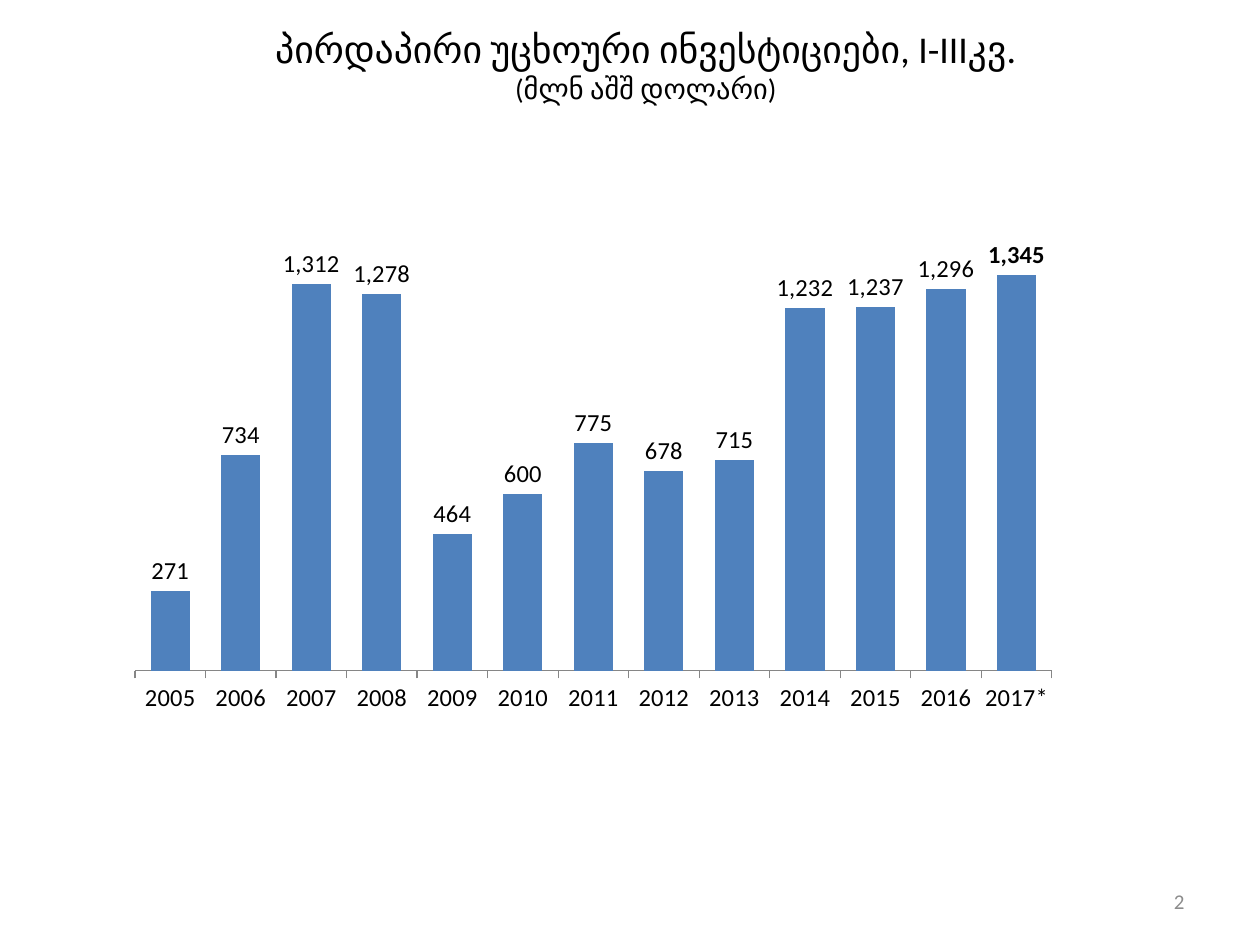
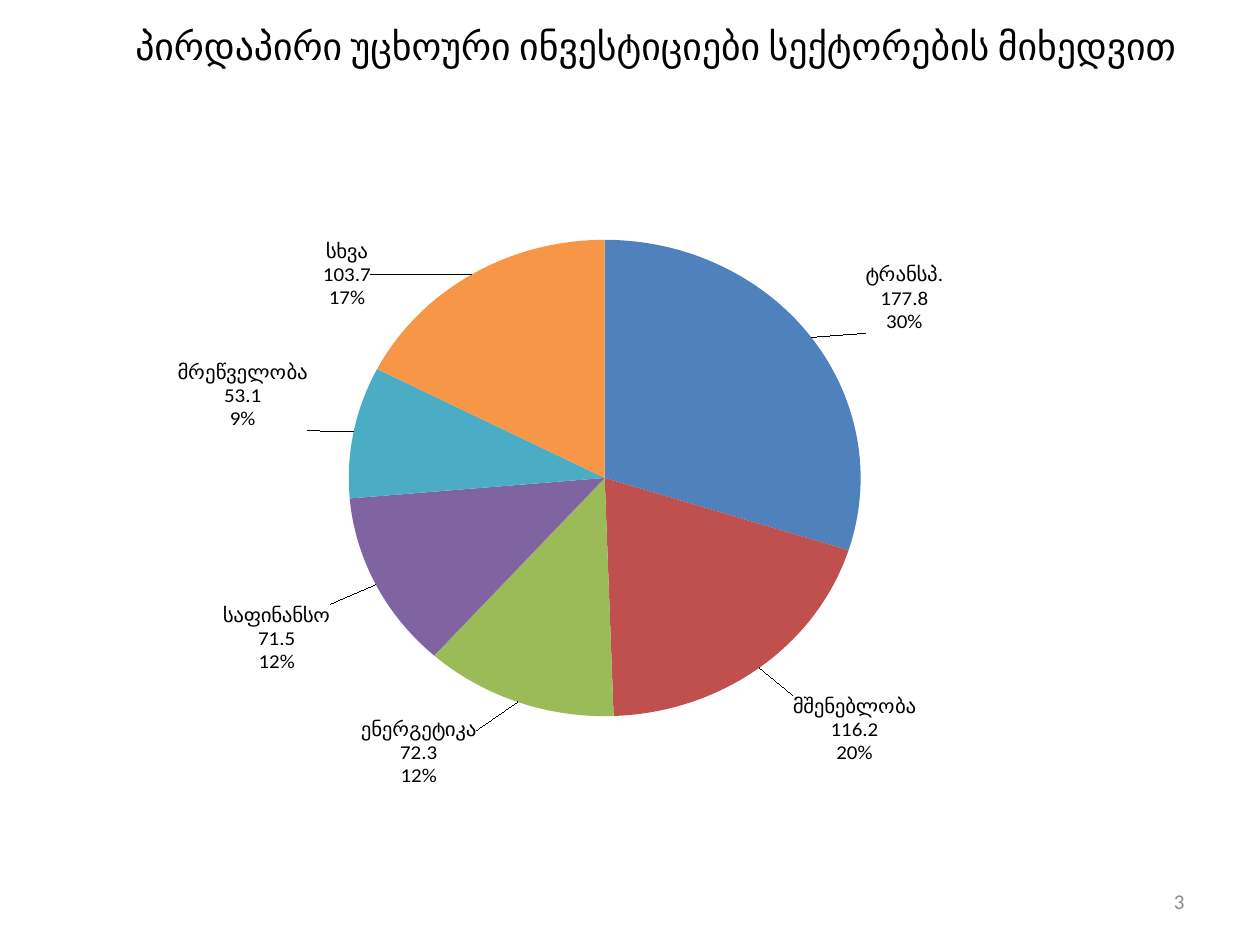
from dataclasses import dataclass

from pptx import Presentation
from pptx.chart.chart import Chart
from pptx.chart.data import CategoryChartData
from pptx.dml.color import RGBColor
from pptx.enum.chart import XL_CHART_TYPE, XL_LABEL_POSITION, XL_TICK_MARK
from pptx.enum.text import MSO_ANCHOR, PP_ALIGN
from pptx.oxml import parse_xml
from pptx.oxml.ns import nsdecls
from pptx.slide import Slide
from pptx.util import Inches, Pt

FONT = "Calibri"
BLACK = RGBColor(0x00, 0x00, 0x00)
GRAY = RGBColor(0x8C, 0x8C, 0x8C)
AXIS_GRAY = RGBColor(0x86, 0x86, 0x86)
BLUE = RGBColor(0x4F, 0x81, 0xBD)
RED = RGBColor(0xC0, 0x50, 0x4D)
GREEN = RGBColor(0x9B, 0xBB, 0x59)
PURPLE = RGBColor(0x80, 0x64, 0xA2)
TEAL = RGBColor(0x4B, 0xAC, 0xC6)
ORANGE = RGBColor(0xF7, 0x96, 0x46)

TITLE_SIZE = 21.6
SUBTITLE_SIZE = 16.2
COLUMN_FONT_SIZE = 14
PIE_FONT_SIZE = 12
THOUSANDS = "#,##0"


@dataclass(frozen=True)
class Box:
    left: float
    top: float
    width: float
    height: float

    def lengths(self) -> tuple[Inches, Inches, Inches, Inches]:
        return (Inches(self.left), Inches(self.top),
                Inches(self.width), Inches(self.height))


@dataclass(frozen=True)
class Sector:
    """A pie slice; the shifts move its label, as fractions of the chart size."""
    name: str
    value: float
    color: RGBColor
    shift_x: float
    shift_y: float


NUMBER_BOX = Box(7.17, 6.95, 2.33, 0.4)

INVESTMENTS = [271, 734, 1312, 1278, 464, 600, 775, 678, 715, 1232, 1237, 1296, 1345]
YEARS = [str(year) for year in range(2005, 2017)] + ["2017*"]

SECTORS = [
    Sector("ტრანსპ.", 177.8, BLUE, 0.05, 0),
    Sector("მშენებლობა", 116.2, RED, 0.03, 0.04),
    Sector("ენერგეტიკა", 72.3, GREEN, -0.04, 0.04),
    Sector("საფინანსო", 71.5, PURPLE, -0.04, 0.03),
    Sector("მრეწველობა", 53.1, TEAL, -0.04, 0),
    Sector("სხვა", 103.7, ORANGE, -0.1, 0.07),
]


def add_text(slide: Slide, text: str, box: Box, *, size: float,
             color: RGBColor = BLACK, align: PP_ALIGN = PP_ALIGN.CENTER,
             second_line: str = "", second_size: float = SUBTITLE_SIZE) -> None:
    frame = slide.shapes.add_textbox(*box.lengths()).text_frame
    frame.word_wrap = True
    frame.vertical_anchor = MSO_ANCHOR.MIDDLE
    paragraph = frame.paragraphs[0]
    paragraph.alignment = align
    lines = [(text, size)]
    if second_line:
        lines.append((second_line, second_size))
    for index, (line, line_size) in enumerate(lines):
        if index:
            paragraph.add_line_break()
        run = paragraph.add_run()
        run.text = line
        run.font.name = FONT
        run.font.size = Pt(line_size)
        run.font.color.rgb = color


def add_titled_slide(presentation: Presentation, title: str, title_box: Box,
                     number: int, subtitle: str = "") -> Slide:
    slide = presentation.slides.add_slide(presentation.slide_layouts[6])
    add_text(slide, title, title_box, size=TITLE_SIZE, second_line=subtitle)
    add_text(slide, str(number), NUMBER_BOX, size=12, color=GRAY, align=PP_ALIGN.RIGHT)
    return slide


def set_font(font, size: float, bold: bool = False) -> None:
    font.name = FONT
    font.size = Pt(size)
    font.bold = bold
    font.color.rgb = BLACK


def layout_xml(box: Box) -> str:
    """Inner plot layout, with the box given as fractions of the chart."""
    return (
        f'<c:layout {nsdecls("c")}><c:manualLayout><c:layoutTarget val="inner"/>'
        '<c:xMode val="edge"/><c:yMode val="edge"/>'
        f'<c:x val="{box.left}"/><c:y val="{box.top}"/>'
        f'<c:w val="{box.width}"/><c:h val="{box.height}"/>'
        '</c:manualLayout></c:layout>'
    )


def add_plain_chart(slide: Slide, kind: XL_CHART_TYPE, box: Box, plot_area: Box,
                    categories: list[str], values: list[float],
                    font_size: float, number_format: str) -> Chart:
    data = CategoryChartData(number_format=number_format)
    data.categories = categories
    data.add_series("Series 1", values)
    chart = slide.shapes.add_chart(kind, *box.lengths(), data).chart
    chart.has_title = False
    chart.has_legend = False
    set_font(chart.font, font_size)
    area = chart.element.xpath(".//c:plotArea")[0]
    for layout in area.xpath("./c:layout"):
        area.remove(layout)
    area.insert(0, parse_xml(layout_xml(plot_area)))
    return chart


def add_investment_columns(slide: Slide) -> None:
    chart = add_plain_chart(
        slide, XL_CHART_TYPE.COLUMN_CLUSTERED, Box(0.92, 1.5, 7.58, 4.25),
        Box(0.02, 0.02, 0.96, 0.88), YEARS, INVESTMENTS, COLUMN_FONT_SIZE, THOUSANDS)
    value_axis = chart.value_axis
    value_axis.minimum_scale = 0
    value_axis.maximum_scale = 1600
    value_axis.has_major_gridlines = False
    value_axis.visible = False
    category_axis = chart.category_axis
    category_axis.major_tick_mark = XL_TICK_MARK.OUTSIDE
    category_axis.format.line.color.rgb = AXIS_GRAY

    plot = chart.plots[0]
    plot.gap_width = 80
    plot.vary_by_categories = False
    series = plot.series[0]
    series.format.fill.solid()
    series.format.fill.fore_color.rgb = BLUE
    labels = series.data_labels
    labels.show_value = True
    labels.number_format = THOUSANDS
    labels.number_format_is_linked = False
    labels.position = XL_LABEL_POSITION.OUTSIDE_END
    set_font(labels.font, COLUMN_FONT_SIZE)
    latest_label = series.points[len(INVESTMENTS) - 1].data_label
    set_font(latest_label.font, COLUMN_FONT_SIZE, bold=True)
    latest_label.position = XL_LABEL_POSITION.OUTSIDE_END


def sector_labels_xml() -> str:
    """Labels with name, value and share on three lines, each moved by its shift."""
    content = (
        '<c:dLblPos val="outEnd"/><c:showLegendKey val="0"/><c:showVal val="1"/>'
        '<c:showCatName val="1"/><c:showSerName val="0"/><c:showPercent val="1"/>'
        '<c:showBubbleSize val="0"/><c:separator>\n</c:separator>'
    )
    labels = "".join(
        f'<c:dLbl><c:idx val="{index}"/><c:layout><c:manualLayout>'
        f'<c:x val="{sector.shift_x}"/><c:y val="{sector.shift_y}"/>'
        f'</c:manualLayout></c:layout>{content}</c:dLbl>'
        for index, sector in enumerate(SECTORS)
    )
    return (f'<c:dLbls {nsdecls("c")}>{labels}{content}'
            '<c:showLeaderLines val="1"/></c:dLbls>')


def add_sector_pie(slide: Slide) -> None:
    chart = add_plain_chart(
        slide, XL_CHART_TYPE.PIE, Box(1.08, 1.58, 7.67, 4.67),
        Box(0.11, 0, 0.75, 0.87), [sector.name for sector in SECTORS],
        [sector.value for sector in SECTORS], PIE_FONT_SIZE, "General")
    series = chart.plots[0].series[0]
    for index, sector in enumerate(SECTORS):
        fill = series.points[index].format.fill
        fill.solid()
        fill.fore_color.rgb = sector.color
    categories = chart.element.xpath(".//c:ser/c:cat")[0]
    categories.addprevious(parse_xml(sector_labels_xml()))


def main() -> None:
    presentation = Presentation()
    presentation.slide_width = Inches(10)
    presentation.slide_height = Inches(7.5)
    add_investment_columns(add_titled_slide(
        presentation, "პირდაპირი უცხოური ინვესტიციები, I-IIIკვ.",
        Box(0.75, 0.17, 8.75, 0.7), 2, subtitle="(მლნ აშშ დოლარი)"))
    add_sector_pie(add_titled_slide(
        presentation, "პირდაპირი უცხოური ინვესტიციები სექტორების მიხედვით",
        Box(0.83, 0.01, 8.75, 0.7), 3))
    presentation.save("out.pptx")


if __name__ == "__main__":
    main()
